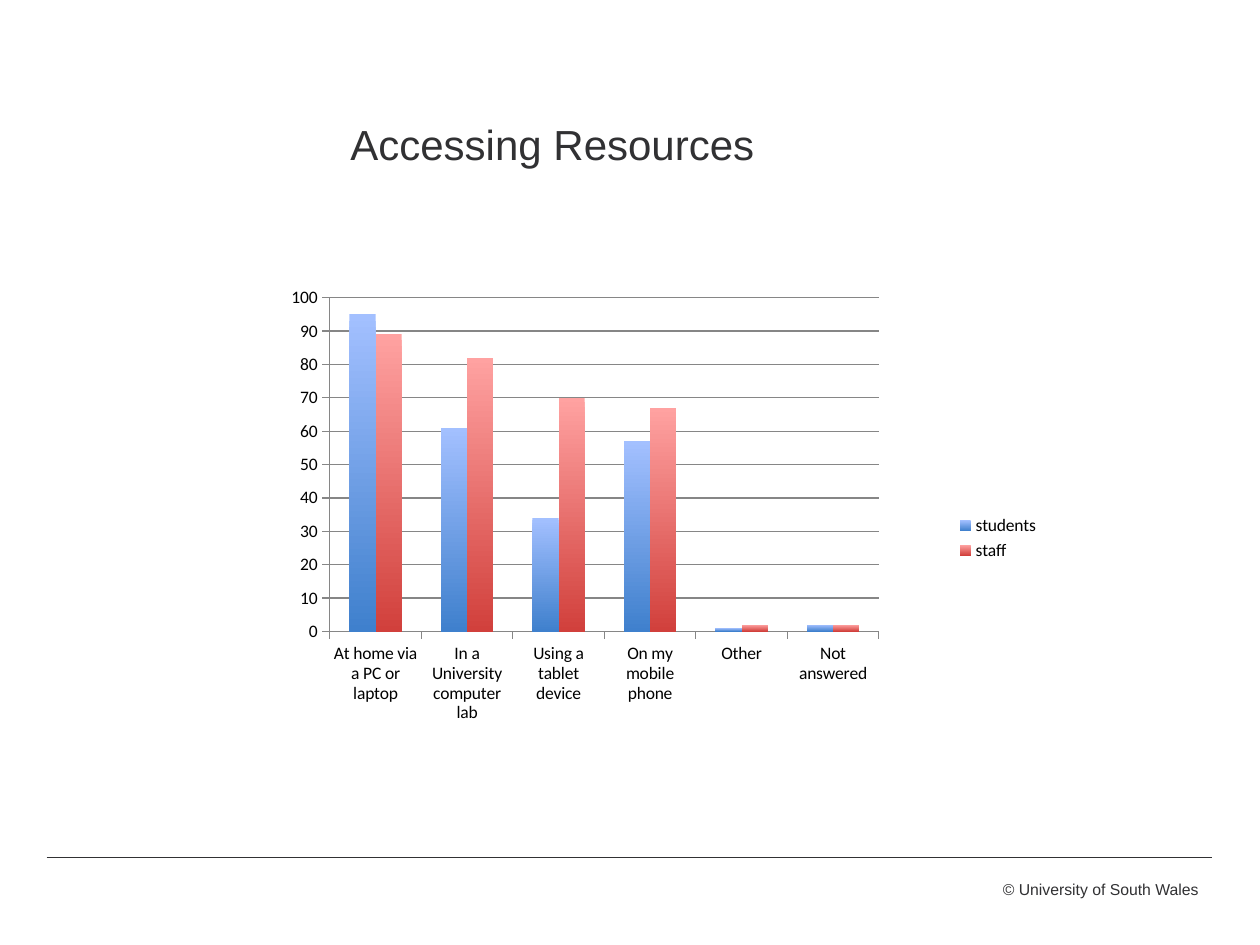
from lxml.etree import SubElement
from pptx import Presentation
from pptx.chart.data import CategoryChartData as ChartData
from pptx.dml.color import RGBColor
from pptx.enum.chart import XL_CHART_TYPE as Kind, XL_LEGEND_POSITION as Side
from pptx.enum.chart import XL_TICK_MARK as Tick
from pptx.enum.shapes import MSO_CONNECTOR as Link
from pptx.enum.text import MSO_ANCHOR as Anchor, PP_ALIGN as Align
from pptx.oxml.ns import qn
from pptx.util import Pt

INK = RGBColor(0x31, 0x31, 0x33)
BLACK = RGBColor(0, 0, 0)
GRAY = RGBColor(0x86, 0x86, 0x86)
BLUES = RGBColor(0xA3, 0xC0, 0xFF), RGBColor(0x3F, 0x80, 0xCD)
REDS = RGBColor(0xFF, 0xA2, 0xA1), RGBColor(0xD1, 0x40, 0x3C)

# Content
TITLE = "Accessing Resources"
NOTE = "© University of South Wales"
GROUPS = ["At home via a PC or laptop", "In a University computer lab",
          "Using a tablet device", "On my mobile phone", "Other", "Not answered"]
SERIES = [("students", [95, 61, 34, 57, 1, 2], BLUES),
          ("staff", [89, 82, 70, 67, 2, 2], REDS)]

# Places in points: left, top, width, height
TITLE_BOX = 193, 64, 340.5, 124
NOTE_BOX = 564.5, 499, 127.5, 18
CHART_BOX = 155.5, 162, 445.7, 290.9
RULE = 26.6, 489.6, 692.6, 489.6
PLOT = {"x": 0.074, "y": 0.028, "w": 0.704, "h": 0.656}


def pts(nums):
    return [Pt(n) for n in nums]


def put_text(shape, text, size, align=Align.LEFT, wrap=True):
    frame = shape.text_frame
    frame.word_wrap = wrap
    frame.vertical_anchor = Anchor.TOP
    para = frame.paragraphs[0]
    para.text = text
    para.alignment = align
    para.font.size = Pt(size)
    para.font.name = "Arial"
    para.font.color.rgb = INK


def style_line(line, color, width):
    line.color.rgb = color
    line.width = Pt(width)


def set_plot(chart, parts):
    area = chart.plots[0]._element.getparent()
    for old in area.findall(qn("c:layout")):
        area.remove(old)
    layout = SubElement(area, qn("c:layout"))
    area.insert(0, layout)
    manual = SubElement(layout, qn("c:manualLayout"))
    tags = {"layoutTarget": "inner", "xMode": "edge", "yMode": "edge", **parts}
    for tag, val in tags.items():
        SubElement(manual, qn(f"c:{tag}")).set("val", str(val))


prs = Presentation()
prs.slide_width, prs.slide_height = Pt(720), Pt(540)
slide = prs.slides.add_slide(prs.slide_layouts[5])
shapes = slide.shapes

# Footer
rule = shapes.add_connector(Link.STRAIGHT, *pts(RULE))
style_line(rule.line, INK, 0.25)
SubElement(rule._element.spPr, qn("a:effectLst"))
note = shapes.add_textbox(*pts(NOTE_BOX))
put_text(note, NOTE, 9, align=Align.RIGHT, wrap=False)

# Title
title = shapes.title
title.left, title.top, title.width, title.height = pts(TITLE_BOX)
put_text(title, TITLE, 24)

# Chart
data = ChartData()
data.categories = GROUPS
for name, vals, _ in SERIES:
    data.add_series(name, vals)
chart = shapes.add_chart(Kind.COLUMN_CLUSTERED, *pts(CHART_BOX), data).chart
chart.has_title = False
chart.font.size = Pt(10)
chart.font.name = "Calibri"
chart.font.color.rgb = BLACK
chart.has_legend = True
chart.legend.position = Side.RIGHT
chart.legend.include_in_layout = False
set_plot(chart, PLOT)

# Columns
plot = chart.plots[0]
plot.gap_width = 150
plot.overlap = 0
plot.vary_by_categories = False
for bars, (_, _, shades) in zip(plot.series, SERIES):
    fill = bars.format.fill
    fill.gradient()
    fill.gradient_angle = 270
    for stop, shade in zip(fill.gradient_stops, shades):
        stop.color.rgb = shade
    bars.format.line.fill.background()

# Axes
for axis in (chart.category_axis, chart.value_axis):
    axis.major_tick_mark = Tick.OUTSIDE
    axis.minor_tick_mark = Tick.NONE
    style_line(axis.format.line, GRAY, 0.75)
scale = chart.value_axis
scale.minimum_scale, scale.maximum_scale, scale.major_unit = 0, 100, 10
style_line(scale.major_gridlines.format.line, GRAY, 0.75)

prs.save("out.pptx")
